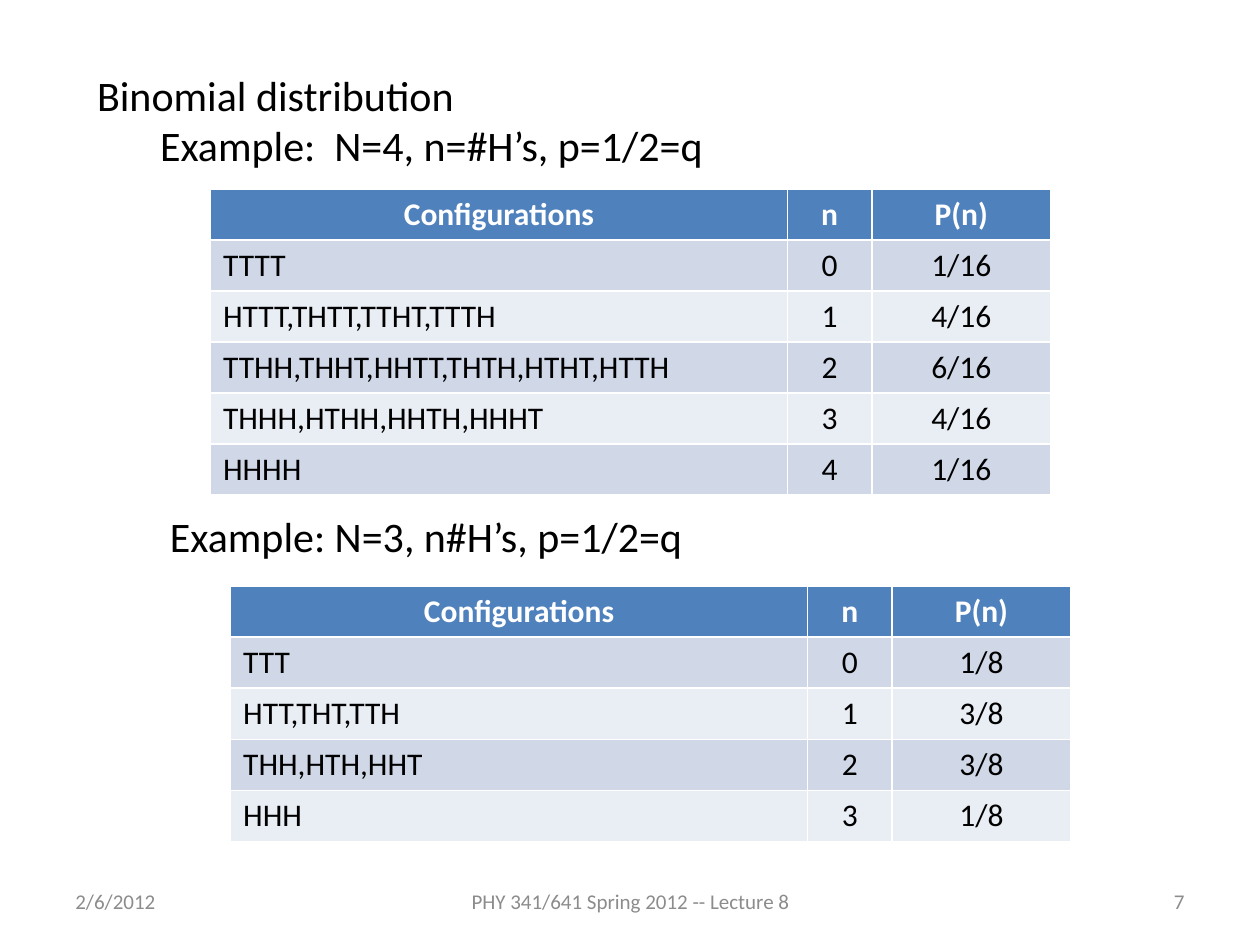
from dataclasses import dataclass

import pptx
import pptx.dml.color
import pptx.enum.text
import pptx.util

Inches = pptx.util.Inches
ALIGN = pptx.enum.text.PP_ALIGN
ANCHOR = pptx.enum.text.MSO_ANCHOR


@dataclass(frozen=True)
class Theme:
    font: str = "Calibri"
    text: str = "000000"
    footer: str = "8C8C8C"
    header_text: str = "FFFFFF"
    header_fill: str = "4F81BD"
    bands: tuple = ("D0D8E8", "E9EDF4")
    heading_size: int = 24
    table_size: int = 18
    footer_size: int = 12


THEME = Theme()
HEADER = ("Configurations", "n", "P(n)")
COLUMN_WIDTHS = (4.58, 0.67, 1.42)

FOUR_TOSSES = (
    ("TTTT", "1/16"),
    ("HTTT,THTT,TTHT,TTTH", "4/16"),
    ("TTHH,THHT,HHTT,THTH,HTHT,HTTH", "6/16"),
    ("THHH,HTHH,HHTH,HHHT", "4/16"),
    ("HHHH", "1/16"),
)
THREE_TOSSES = (
    ("TTT", "1/8"),
    ("HTT,THT,TTH", "3/8"),
    ("THH,HTH,HHT", "3/8"),
    ("HHH", "1/8"),
)


def rgb(value):
    return pptx.dml.color.RGBColor.from_string(value)


def format_paragraph(p, size, color, align=ALIGN.LEFT, bold=False):
    p.alignment = align
    p.font.name = THEME.font
    p.font.size = pptx.util.Pt(size)
    p.font.bold = bold
    p.font.color.rgb = rgb(color)


def add_title(s, heading, example):
    sp = s.shapes.title
    sp.left, sp.top, sp.width, sp.height = map(Inches, (0.67, 0.5, 8.58, 0.91))
    tf = sp.text_frame
    tf.auto_size = pptx.enum.text.MSO_AUTO_SIZE.NONE
    tf.vertical_anchor = ANCHOR.TOP
    tf.text = f"{heading}\n{example}"
    for p in tf.paragraphs:
        format_paragraph(p, THEME.heading_size, THEME.text)
    pPr = tf.paragraphs[1]._p.get_or_add_pPr()
    pPr.set("marL", str(Inches(0.5)))
    pPr.set("indent", "0")


def add_text(s, text, box, size, color, align=ALIGN.LEFT, anchor=ANCHOR.TOP):
    tf = s.shapes.add_textbox(*map(Inches, box)).text_frame
    tf.word_wrap = True
    tf.vertical_anchor = anchor
    tf.text = text
    format_paragraph(tf.paragraphs[0], size, color, align)


def add_distribution_table(s, left, top, height, outcomes):
    """Add a table of outcomes, numbering n from 0; the table style draws the rules."""
    rows = [HEADER] + [(names, str(n), chance)
                       for n, (names, chance) in enumerate(outcomes)]
    table = s.shapes.add_table(
        len(rows), len(HEADER), Inches(left), Inches(top),
        Inches(sum(COLUMN_WIDTHS)), Inches(height)).table
    for column, width in zip(table.columns, COLUMN_WIDTHS):
        column.width = Inches(width)
    for i, row in enumerate(rows):
        is_header = i == 0
        fill = THEME.header_fill if is_header else THEME.bands[(i - 1) % 2]
        color = THEME.header_text if is_header else THEME.text
        for j, text in enumerate(row):
            cell = table.cell(i, j)
            cell.text = text
            cell.fill.solid()
            cell.fill.fore_color.rgb = rgb(fill)
            align = ALIGN.CENTER if is_header or j > 0 else ALIGN.LEFT
            format_paragraph(cell.text_frame.paragraphs[0], THEME.table_size,
                             color, align, bold=is_header)


def add_footer(s):
    for text, left, width, align in (
        ("2/6/2012", 0.5, 2.33, ALIGN.LEFT),
        ("PHY 341/641 Spring 2012 -- Lecture 8", 3.42, 3.17, ALIGN.CENTER),
        ("7", 7.17, 2.33, ALIGN.RIGHT),
    ):
        add_text(s, text, (left, 6.95, width, 0.4), THEME.footer_size,
                 THEME.footer, align, ANCHOR.MIDDLE)


def main():
    prs = pptx.Presentation()
    prs.slide_width, prs.slide_height = Inches(10), Inches(7.5)
    s = prs.slides.add_slide(prs.slide_layouts.get_by_name("Title Only"))
    add_footer(s)
    add_title(s, "Binomial distribution", "Example:  N=4, n=#H’s, p=1/2=q")
    add_distribution_table(s, 1.67, 1.5, 2.43, FOUR_TOSSES)
    add_text(s, "Example: N=3, n#H’s, p=1/2=q", (1.25, 4, 7.17, 0.5),
             THEME.heading_size, THEME.text)
    add_distribution_table(s, 1.83, 4.65, 2.03, THREE_TOSSES)
    prs.save("out.pptx")


if __name__ == "__main__":
    main()
